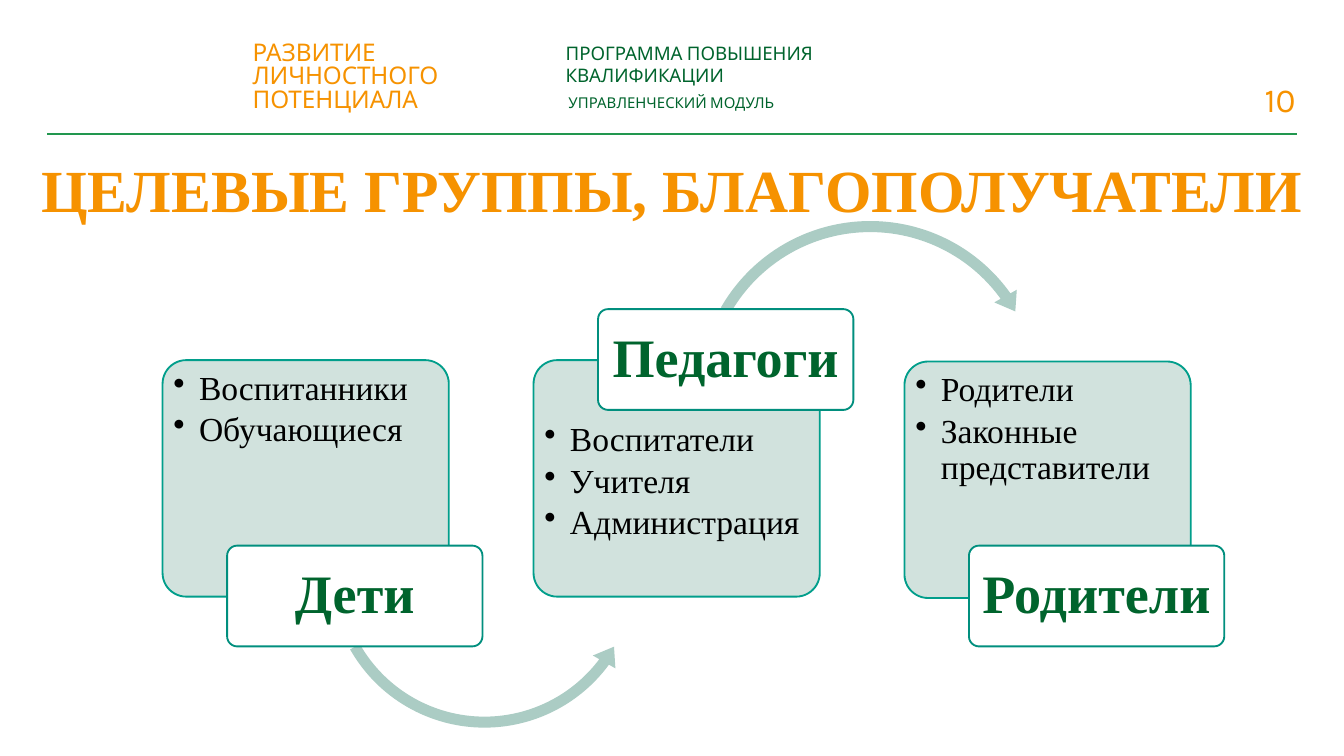
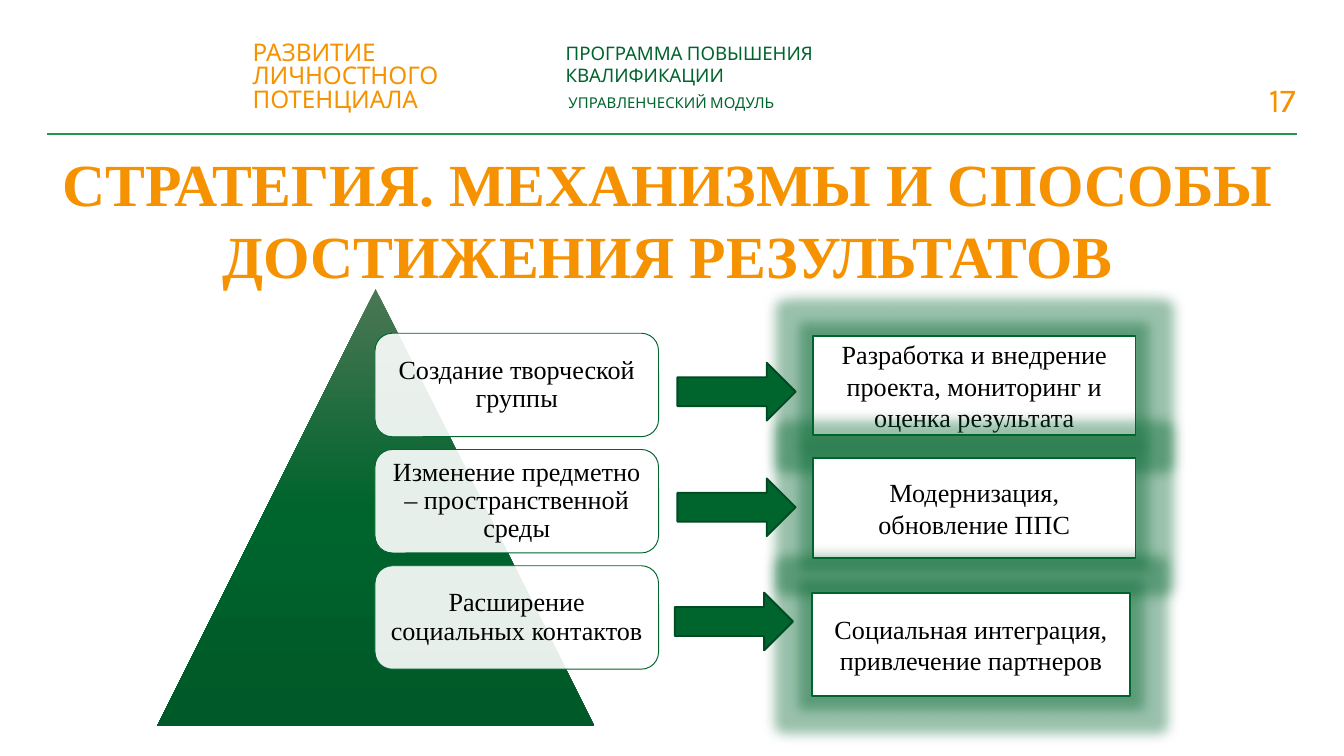
"""Build two programme slides: target groups and strategy."""
from lxml import etree
from pptx import Presentation
from pptx import util as u
from pptx.dml.color import RGBColor
from pptx.enum import shapes, text
from pptx.oxml.ns import qn

COLORS = {
    "orange": "F69200", "green": "00642D", "rule": "22974F", "black": "000000",
    "white": "FFFFFF", "card": "CCDFDA", "card_line": "019E8B",
    "label_line": "018F7E", "arc": "ABCCC4", "arrow_line": "004A21",
    "peak": "4B7754", "base": "005928",
}
HEAD_FONT, BODY_FONT = "Karla", "Times New Roman"
COLUMNS, ROWS = 100, 56.25
CELL = u.Inches(0.1)
SHAPE, ALIGN, ANCHOR = shapes.MSO_SHAPE, text.PP_ALIGN, text.MSO_ANCHOR


def cells(*counts):
    """Turn grid counts into lengths."""
    return [u.Emu(round(count * CELL)) for count in counts]


def rgb(name):
    """Look up a named colour."""
    return RGBColor.from_string(COLORS[name])


def add_bullet(paragraph):
    """Give a paragraph a hanging round bullet."""
    properties = paragraph._p.get_or_add_pPr()
    indent = u.Inches(0.19)
    properties.set("marL", str(indent))
    properties.set("indent", str(-indent))
    etree.SubElement(properties, qn("a:buChar")).set("char", "•")


def write(shape, lines, size, color, font=BODY_FONT, bold=False, align=ALIGN.CENTER,
          anchor=ANCHOR.MIDDLE, insets=(1, 0.5, 1, 0.5), spacing=None, bullets=False):
    """Fill a shape with paragraphs of one style."""
    frame = shape.text_frame
    frame.word_wrap = True
    frame.vertical_anchor = anchor
    (frame.margin_left, frame.margin_top,
     frame.margin_right, frame.margin_bottom) = cells(*insets)
    for index, line in enumerate(lines):
        paragraph = frame.add_paragraph() if index else frame.paragraphs[0]
        paragraph.alignment = align
        if spacing:
            paragraph.line_spacing = spacing
        if bullets:
            paragraph.space_after = u.Pt(3)
            add_bullet(paragraph)
        run = paragraph.add_run()
        run.text = line
        run.font.name = font
        run.font.size = u.Pt(size)
        run.font.bold = bold
        run.font.color.rgb = rgb(color)


def add_figure(slide, kind, box, fill, line=None, width=1, opacity=None, adjust=()):
    """Add a preset shape with a plain fill and an optional outline."""
    shape = slide.shapes.add_shape(kind, *cells(*box))
    shape.shadow.inherit = False
    for index, value in enumerate(adjust):
        shape.adjustments[index] = value
    shape.fill.solid()
    shape.fill.fore_color.rgb = rgb(fill)
    if opacity:
        color = shape._element.spPr.find(".//" + qn("a:srgbClr"))
        etree.SubElement(color, qn("a:alpha")).set("val", str(opacity * 1000))
    if line:
        shape.line.color.rgb = rgb(line)
        shape.line.width = u.Pt(width)
    else:
        shape.line.fill.background()
    return shape


def add_header_text(slide, box, content, size, color, align=ALIGN.LEFT,
                    spacing=None, grow=True):
    """Add one text of the page header."""
    shape = slide.shapes.add_textbox(*cells(*box))
    write(shape, [content], size, color, HEAD_FONT, align=align, anchor=ANCHOR.TOP,
          insets=(0, 0, 0, 0), spacing=spacing)
    if grow:
        shape.text_frame.auto_size = text.MSO_AUTO_SIZE.SHAPE_TO_FIT_TEXT


def add_page(presentation, number, title, title_box):
    """Add a slide with the shared header, page number and title."""
    slide = presentation.slides.add_slide(presentation.slide_layouts[6])
    rule = slide.shapes.add_connector(shapes.MSO_CONNECTOR.STRAIGHT,
                                      *cells(3.5, 10, COLUMNS - 3.5, 10))
    rule.line.color.rgb = rgb("rule")
    rule.line.width = u.Pt(1)
    etree.SubElement(rule._element.spPr, qn("a:effectLst"))
    add_header_text(slide, (18.8, 3.2, 22.7, 5.3), "РАЗВИТИЕ ЛИЧНОСТНОГО ПОТЕНЦИАЛА",
                    13, "orange", spacing=0.8)
    add_header_text(slide, (42.1, 3.1, 23.4, 3.4), "ПРОГРАММА ПОВЫШЕНИЯ КВАЛИФИКАЦИИ",
                    10, "green")
    add_header_text(slide, (42.3, 7, 17, 1.4), "УПРАВЛЕНЧЕСКИЙ МОДУЛЬ", 8, "green")
    add_header_text(slide, (90.3, 5.9, 6.1, 2.3), str(number), 18, "orange",
                    align=ALIGN.RIGHT, grow=False)
    heading = slide.shapes.add_textbox(*cells(*title_box))
    write(heading, [title], 32, "orange", bold=True)
    return slide


def add_group_card(slide, left, top, members, raised):
    """Add a card that lists the members of a group."""
    card = add_figure(slide, SHAPE.ROUNDED_RECTANGLE, (left, top, 21.3, 17.6), "card",
                      "card_line", opacity=90, adjust=[0.1])
    write(card, members, 18, "black", align=ALIGN.LEFT, anchor=ANCHOR.TOP,
          insets=(0.3, 4.1 if raised else 0.3, 0.3, 0.3), spacing=0.9, bullets=True)


def add_group_label(slide, left, name, raised):
    """Add the name plate that overlaps a card."""
    label = add_figure(slide, SHAPE.ROUNDED_RECTANGLE,
                       (left + 4.8, 23 if raised else 40.6, 19, 7.5),
                       "white", "label_line", adjust=[0.1])
    write(label, [name], 29, "green", bold=True, insets=(0.6, 0.4, 0.6, 0.4), spacing=0.9)


def build_groups(presentation):
    """Build the slide of target groups."""
    slide = add_page(presentation, 10, "ЦЕЛЕВЫЕ ГРУППЫ, БЛАГОПОЛУЧАТЕЛИ",
                     (0, 10.4, COLUMNS, 7.2))
    groups = [
        ("Дети", ["Воспитанники", "Обучающиеся"], 26.8,
         (SHAPE.LEFT_CIRCULAR_ARROW, (24, 30.6, 24.1, 24.1),
          [0.034, 4.192, 21.947, 90.245, 0.04])),
        ("Педагоги", ["Воспитатели", "Учителя", "Администрация"], 26.8,
         (SHAPE.CIRCULAR_ARROW, (51.4, 15.9, 26.7, 26.7),
          [0.031, 3.75, 194.626, 125.886, 0.036])),
        ("Родители", ["Родители", "Законные представители"], 26.9, None),
    ]
    for index, (name, members, top, arc) in enumerate(groups):
        left, raised = 12.1 + 27.6 * index, index % 2 == 1
        add_group_card(slide, left, top, members, raised)
        if arc:
            kind, box, adjust = arc
            add_figure(slide, kind, box, "arc", adjust=adjust)
        add_group_label(slide, left, name, raised)


def add_pyramid(slide):
    """Add the triangle with a vertical gradient."""
    pyramid = add_figure(slide, SHAPE.ISOSCELES_TRIANGLE, (11.7, 21.5, 32.5, 32.5), "green")
    pyramid.fill.gradient()
    pyramid.fill.gradient_angle = 270
    stops = pyramid._element.spPr.find(".//" + qn("a:gsLst"))
    for stop in list(stops):
        stops.remove(stop)
    for percent, name in ((0, "peak"), (50, "green"), (100, "base")):
        stop = etree.SubElement(stops, qn("a:gs"))
        stop.set("pos", str(percent * 1000))
        etree.SubElement(stop, qn("a:srgbClr")).set("val", COLORS[name])


def add_glow(shape):
    """Surround a shape with a translucent green glow."""
    effects = shape._element.spPr.find(qn("a:effectLst"))
    glow = etree.SubElement(effects, qn("a:glow"))
    glow.set("rad", str(u.Pt(13)))
    color = etree.SubElement(glow, qn("a:srgbClr"))
    color.set("val", COLORS["green"])
    etree.SubElement(color, qn("a:alpha")).set("val", "40000")


def build_strategy(presentation):
    """Build the slide of mechanisms and results."""
    slide = add_page(presentation, 17,
                     "СТРАТЕГИЯ. МЕХАНИЗМЫ И СПОСОБЫ ДОСТИЖЕНИЯ РЕЗУЛЬТАТОВ",
                     (1.2, 10.4, 97, 11.7))
    add_pyramid(slide)
    mechanisms = ["Создание творческой группы",
                  "Изменение предметно – пространственной среды",
                  "Расширение социальных контактов"]
    for index, mechanism in enumerate(mechanisms):
        step = add_figure(slide, SHAPE.ROUNDED_RECTANGLE,
                          (27.9, 24.8 + 8.65 * index, 21.1, 7.7),
                          "white", "green", width=0.5, opacity=90)
        write(step, [mechanism], 14, "black", insets=(0.6, 0.6, 0.6, 0.6), spacing=0.9)
    results = [
        ("Разработка и внедрение проекта, мониторинг и оценка результата",
         (60.5, 25, 24, 7.4)),
        ("Модернизация, обновление ППС", (60.5, 34.1, 24, 7.4)),
        ("Социальная интеграция, привлечение партнеров", (60.4, 44.1, 23.7, 7.7)),
    ]
    for result, box in results:
        panel = add_figure(slide, SHAPE.RECTANGLE, box, "white", "green")
        add_glow(panel)
        write(panel, [result], 14, "black")
    for left, top in ((50.4, 27), (50.4, 35.6), (50.2, 44.1)):
        add_figure(slide, SHAPE.RIGHT_ARROW, (left, top, 8.8, 4.3), "green", "arrow_line")


def main():
    """Create and save the presentation."""
    presentation = Presentation()
    presentation.slide_width, presentation.slide_height = cells(COLUMNS, ROWS)
    build_groups(presentation)
    build_strategy(presentation)
    presentation.save("out.pptx")


if __name__ == "__main__":
    main()
